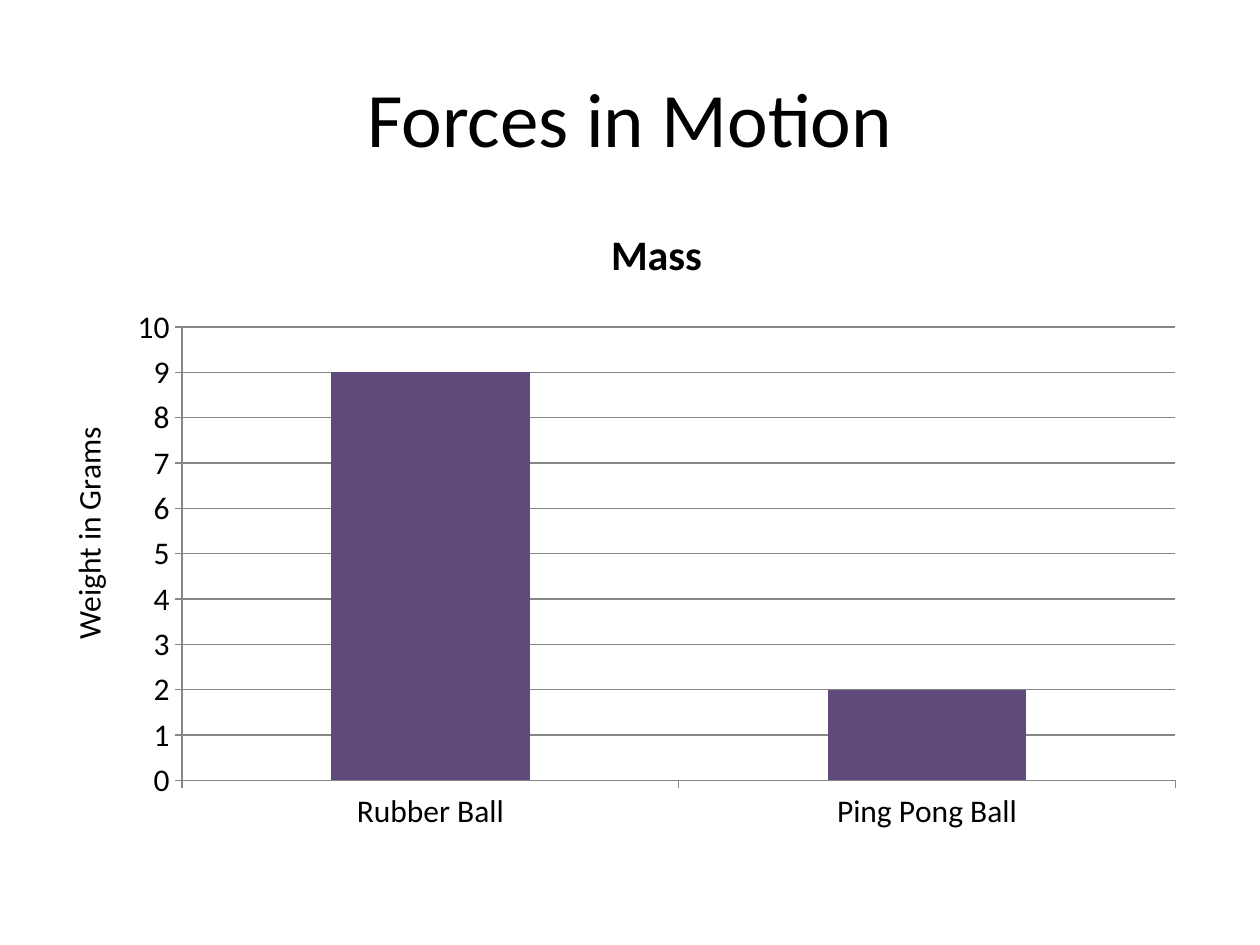
from pptx import Presentation
from pptx.chart.data import CategoryChartData
from pptx.dml.color import RGBColor
from pptx.enum import chart as ch, text
from pptx.util import Cm, Pt

FONT = "Calibri"
BLACK = RGBColor(0x00, 0x00, 0x00)
PURPLE = RGBColor(0x60, 0x4A, 0x7B)
GRAY = RGBColor(0x86, 0x86, 0x86)


def style_font(font, size, bold=False):
    font.name, font.size, font.bold = FONT, Pt(size), bold
    font.color.rgb = BLACK


def add_title(slide, left, top, width, height):
    sp = slide.shapes.title
    sp.left, sp.top, sp.width, sp.height = left, top, width, height
    tf = sp.text_frame
    tf.vertical_anchor = text.MSO_ANCHOR.MIDDLE
    p = tf.paragraphs[0]
    p.alignment = text.PP_ALIGN.CENTER
    r = p.add_run()
    r.text = "Forces in Motion"
    style_font(r.font, 44)


def add_mass_chart(slide, left, top, width, height):
    data = CategoryChartData()
    data.categories = ["Rubber Ball", "Ping Pong Ball"]
    data.add_series("Mass", (9, 2))
    chart = slide.shapes.add_chart(
        ch.XL_CHART_TYPE.COLUMN_CLUSTERED, left, top, width, height, data).chart
    style_font(chart.font, 18)
    chart.has_legend = False

    # Chart title
    chart.has_title = True
    r = chart.chart_title.text_frame.paragraphs[0].add_run()
    r.text = "Mass"
    style_font(r.font, 24, bold=True)
    chart.chart_title.include_in_layout = False

    # Columns
    plot = chart.plots[0]
    plot.gap_width = 150
    plot.vary_by_categories = False
    fill = plot.series[0].format.fill
    fill.solid()
    fill.fore_color.rgb = PURPLE

    # Axes and gridlines
    value_axis = chart.value_axis
    value_axis.minimum_scale, value_axis.maximum_scale = 0, 10
    value_axis.major_unit = 1
    value_axis.has_major_gridlines = True
    chart.category_axis.has_major_gridlines = False
    for axis in (chart.category_axis, value_axis):
        axis.major_tick_mark = ch.XL_TICK_MARK.OUTSIDE
    for part in (chart.category_axis, value_axis, value_axis.major_gridlines):
        part.format.line.color.rgb = GRAY
        part.format.line.width = Pt(0.75)


def add_axis_label(slide, left, top, width, height):
    sp = slide.shapes.add_textbox(left, top, width, height)
    sp.rotation = 270
    tf = sp.text_frame
    tf.word_wrap = True
    tf.auto_size = text.MSO_AUTO_SIZE.SHAPE_TO_FIT_TEXT
    r = tf.paragraphs[0].add_run()
    r.text = "Weight in Grams"
    style_font(r.font, 18)


def main():
    prs = Presentation()
    prs.slide_width, prs.slide_height = Cm(25.4), Cm(19.05)
    slide = prs.slides.add_slide(prs.slide_layouts.get_by_name("Title Only"))
    add_title(slide, Cm(1.27), Cm(0.76), Cm(22.86), Cm(3.18))
    add_mass_chart(slide, Cm(2.34), Cm(4.01), Cm(21.79), Cm(13))
    add_axis_label(slide, Cm(-1.27), Cm(9.53), Cm(6.15), Cm(1.07))
    prs.save("out.pptx")


if __name__ == "__main__":
    main()
